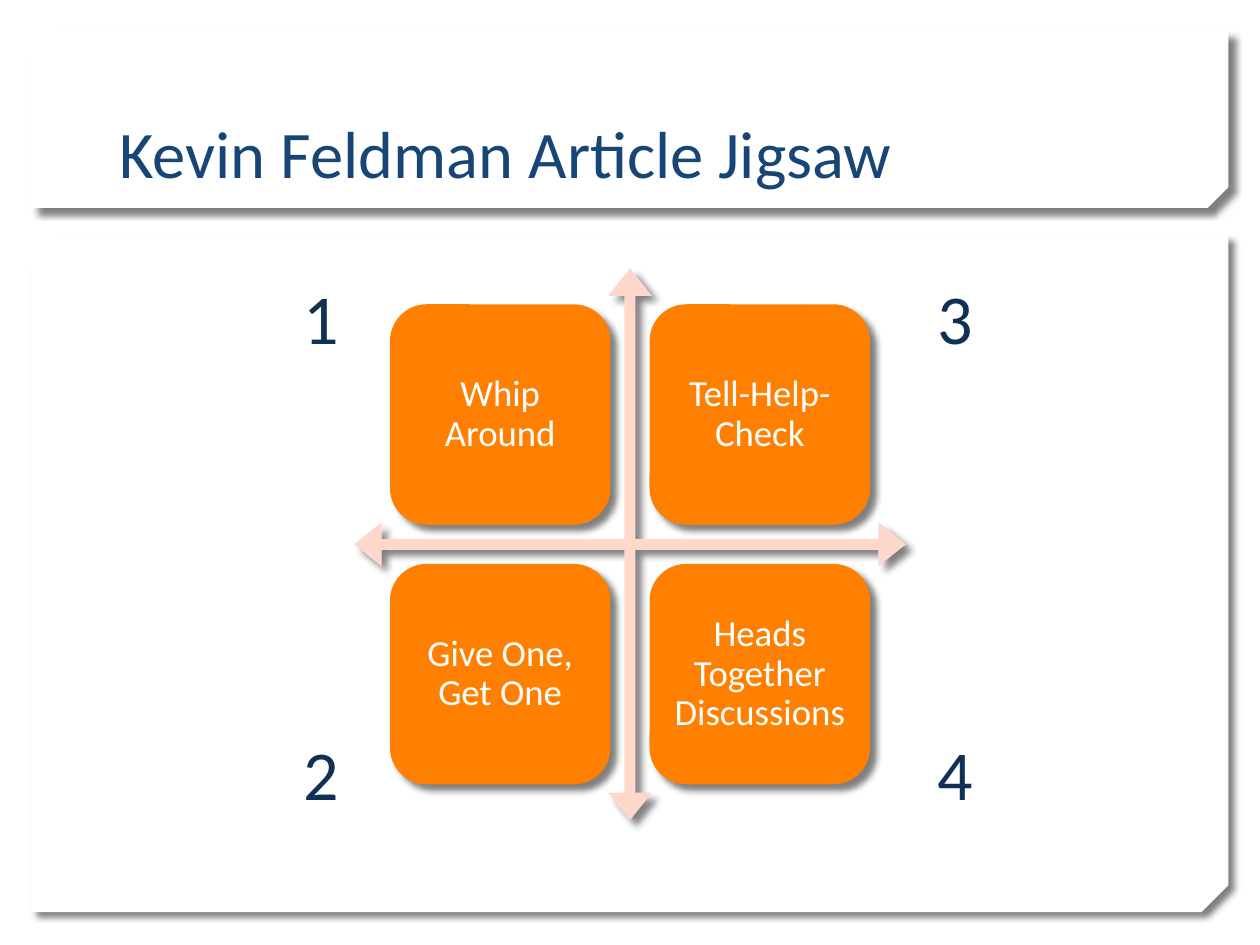
from lxml.etree import SubElement
from pptx import Presentation
from pptx.dml.color import RGBColor
from pptx.enum.shapes import MSO_SHAPE as Kind
from pptx.enum.text import MSO_ANCHOR as Anchor, PP_ALIGN as Align
from pptx.oxml.ns import qn
from pptx.util import Inches, Pt

TITLE = "Kevin Feldman Article Jigsaw"
TILES = [["Whip Around", "Tell-Help-Check"],
         ["Give One, Get One", "Heads Together Discussions"]]
LABELS = [["1", "3"], ["2", "4"]]

WHITE = RGBColor(0xFF, 0xFF, 0xFF)
ORANGE = RGBColor(0xFF, 0x7F, 0x01)
PINK = RGBColor(0xFF, 0xD8, 0xCC)
BLUE = RGBColor(0x17, 0x45, 0x76)
NAVY = RGBColor(0x10, 0x31, 0x54)

WIDE, HIGH = 10, 7.5
EDGE = 0.25
PANELS = [(1.87, 5.37, 0.04), (0.25, 1.4, 0.117)]  # top, height, snip
MID_X, MID_Y = WIDE / 2, 4.32
CROSS = 4.38
TILE, STEP = 1.75, 2.06
LABEL_X, LABEL_Y = (2.31, 7.34), (2.13, 5.75)

deck = Presentation()
deck.slide_width, deck.slide_height = Inches(WIDE), Inches(HIGH)
slide = deck.slides.add_slide(deck.slide_layouts[6])


def cast(shape):
    """Give the shape a soft shadow to the lower right."""
    shape.shadow.inherit = False
    glow = SubElement(shape._element.spPr.find(qn("a:effectLst")),
                      qn("a:outerShdw"), blurRad=str(Pt(4)), dist=str(Pt(5)),
                      dir=str(45 * 60000), algn="tl", rotWithShape="0")
    tint = SubElement(glow, qn("a:srgbClr"), val="000000")
    SubElement(tint, qn("a:alpha"), val="50000")


def block(kind, box, fill, adjust=()):
    shape = slide.shapes.add_shape(kind, *map(Inches, box))
    for i, value in enumerate(adjust):
        shape.adjustments[i] = value
    shape.fill.solid()
    shape.fill.fore_color.rgb = fill
    shape.line.fill.background()
    cast(shape)
    return shape


def write(frame, text, size, color, anchor=Anchor.TOP):
    frame.word_wrap = True
    frame.vertical_anchor = anchor
    para = frame.paragraphs[0]
    para.text = text
    para.font.name, para.font.size = "Calibri", Pt(size)
    para.font.color.rgb = color
    return para


def label(box, *style):
    write(slide.shapes.add_textbox(*map(Inches, box)).text_frame, *style)


for top, high, snip in PANELS:
    panel = block(Kind.SNIP_2_DIAG_RECTANGLE,
                  (EDGE, top, WIDE - 2 * EDGE, high), WHITE, (0, snip))
    panel._element.spPr.find(qn("a:xfrm")).set("flipV", "1")

label((0.85, 0.32, 8.29, 1.25), TITLE, 38, BLUE, Anchor.BOTTOM)

block(Kind.QUAD_ARROW, (MID_X - CROSS / 2, MID_Y - CROSS / 2, CROSS, CROSS),
      PINK, (0.02, 0.04, 0.05))

for r, row in enumerate(TILES):
    for c, text in enumerate(row):
        left = MID_X + (c - 0.5) * STEP - TILE / 2
        top = MID_Y + (r - 0.5) * STEP - TILE / 2
        frame = block(Kind.ROUNDED_RECTANGLE, (left, top, TILE, TILE),
                      ORANGE).text_frame
        frame.margin_left = frame.margin_right = Inches(0.09)
        frame.margin_top = frame.margin_bottom = Inches(0.09)
        para = write(frame, text, 21, WHITE, Anchor.MIDDLE)
        para.alignment = Align.CENTER
        para.line_spacing = 0.9

for top, row in zip(LABEL_Y, LABELS):
    for left, text in zip(LABEL_X, row):
        label((left, top, 0.46, 0.77), text, 40, NAVY)

deck.save("out.pptx")
